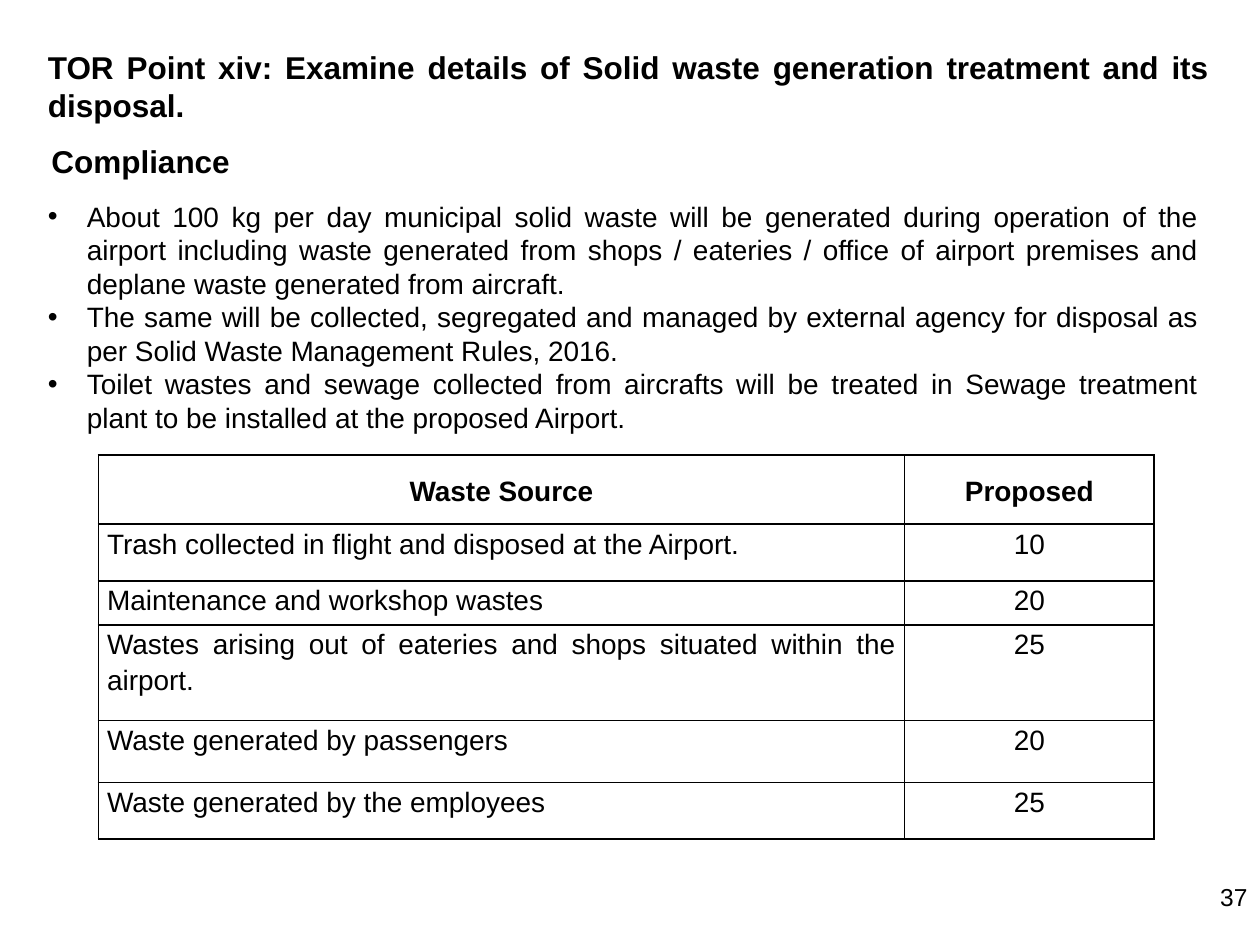
from lxml import etree
from pptx import Presentation
from pptx.dml.color import RGBColor
from pptx.enum.text import MSO_ANCHOR, MSO_AUTO_SIZE, PP_ALIGN
from pptx.oxml.ns import qn
from pptx.util import Inches, Pt

LEFT, CENTER, RIGHT, JUSTIFY = PP_ALIGN.LEFT, PP_ALIGN.CENTER, PP_ALIGN.RIGHT, PP_ALIGN.JUSTIFY
TOP, MIDDLE = MSO_ANCHOR.TOP, MSO_ANCHOR.MIDDLE
NO_AUTOFIT = MSO_AUTO_SIZE.NONE
FONT = "Arial"
BLACK = "000000"

TITLE = "TOR Point xiv: Examine details of Solid waste generation treatment and its disposal."
COMPLIANCE_POINTS = [
    "About 100 kg per day municipal solid waste will be generated during operation of the airport "
    "including waste generated from shops / eateries / office of airport premises and deplane waste "
    "generated from aircraft.",
    "The same will be collected, segregated and managed by external agency for disposal as per "
    "Solid Waste Management Rules, 2016.",
    "Toilet wastes and sewage collected from aircrafts will be treated in Sewage treatment plant "
    "to be installed at the proposed Airport.",
]
WASTE_ROWS = [
    ("Waste Source", "Proposed"),
    ("Trash collected in flight and disposed at the Airport.", "10"),
    ("Maintenance and workshop wastes", "20"),
    ("Wastes arising out of eateries and shops situated within the airport.", "25"),
    ("Waste generated by passengers", "20"),
    ("Waste generated by the employees", "25"),
]
COLUMN_WIDTHS = [6.4, 1.98]
ROW_HEIGHTS = [0.55, 0.45, 0.35, 0.76, 0.49, 0.45]


def color(value):
    return RGBColor.from_string(value)


def format_paragraph(paragraph, size, alignment, bold=False):
    paragraph.alignment = alignment
    paragraph.space_before = Pt(0)
    paragraph.font.name = FONT
    paragraph.font.size = Pt(size)
    paragraph.font.bold = bold
    paragraph.font.color.rgb = color(BLACK)


def fill_text(shape, box, lines, size, alignment, bold=False, anchor=TOP):
    shape.left, shape.top, shape.width, shape.height = map(Inches, box)
    frame = shape.text_frame
    frame.word_wrap = True
    frame.auto_size = NO_AUTOFIT
    frame.vertical_anchor = anchor
    frame.text = "\n".join(lines)
    for paragraph in frame.paragraphs:
        format_paragraph(paragraph, size, alignment, bold)


def add_text(slide, box, text, size, alignment, bold=False):
    shape = slide.shapes.add_textbox(*map(Inches, box))
    fill_text(shape, box, [text], size, alignment, bold)


def set_bullet(paragraph, indent):
    properties = paragraph._p.get_or_add_pPr()
    properties.set("marL", str(Inches(indent)))
    properties.set("indent", str(-Inches(indent)))
    bullet = etree.Element(qn("a:buChar"), char="•")
    properties.insert_element_before(bullet, "a:tabLst", "a:defRPr", "a:extLst")


def set_borders(cell, width):
    properties = cell._tc.get_or_add_tcPr()
    for position, side in enumerate(("a:lnL", "a:lnR", "a:lnT", "a:lnB")):
        line = etree.Element(qn(side), w=str(Pt(width)))
        fill = etree.SubElement(line, qn("a:solidFill"))
        etree.SubElement(fill, qn("a:srgbClr"), val=BLACK)
        properties.insert(position, line)


def format_cell(cell, text, alignment, header):
    cell.margin_left = cell.margin_right = Inches(0.07)
    cell.margin_top = cell.margin_bottom = 0
    cell.vertical_anchor = MIDDLE if header else TOP
    cell.fill.background()
    cell.text = text
    paragraph = cell.text_frame.paragraphs[0]
    format_paragraph(paragraph, 16, alignment, header)
    paragraph.line_spacing = 1.15
    set_borders(cell, 1)


def add_waste_table(slide):
    table = slide.shapes.add_table(
        len(WASTE_ROWS), len(COLUMN_WIDTHS), Inches(0.78), Inches(3.61),
        Inches(sum(COLUMN_WIDTHS)), Inches(sum(ROW_HEIGHTS))).table
    for column, width in zip(table.columns, COLUMN_WIDTHS):
        column.width = Inches(width)
    for row, height in zip(table.rows, ROW_HEIGHTS):
        row.height = Inches(height)
    for row_index, texts in enumerate(WASTE_ROWS):
        header = row_index == 0
        for column_index, text in enumerate(texts):
            alignment = CENTER if header or column_index == 1 else JUSTIFY
            format_cell(table.cell(row_index, column_index), text, alignment, header)


def main():
    presentation = Presentation()
    presentation.slide_width, presentation.slide_height = Inches(10), Inches(7.5)
    slide = presentation.slides.add_slide(presentation.slide_layouts[1])
    title, body = slide.placeholders

    fill_text(title, (0.28, 0.33, 9.42, 0.7), [TITLE], 18, JUSTIFY, True, MIDDLE)
    add_text(slide, (0.31, 1.08, 1.77, 0.4), "Compliance", 18, LEFT, True)
    fill_text(body, (0.28, 1.53, 9.33, 1.99), COMPLIANCE_POINTS, 16, JUSTIFY)
    for paragraph in body.text_frame.paragraphs:
        set_bullet(paragraph, 0.31)
    add_waste_table(slide)
    add_text(slide, (7.67, 6.95, 2.33, 0.52), "37", 14, RIGHT)

    presentation.save("out.pptx")


if __name__ == "__main__":
    main()
